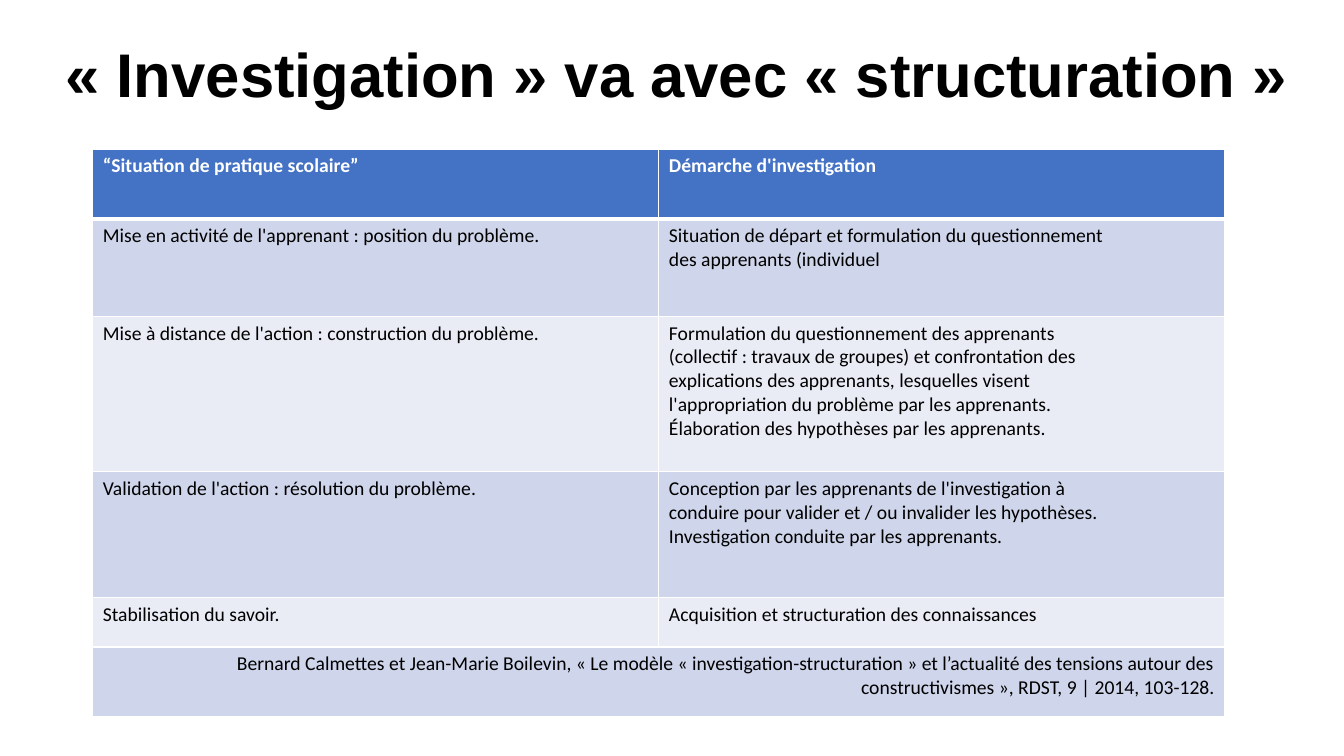
import pptx
import pptx.dml.color
import pptx.enum.text
import pptx.oxml
import pptx.oxml.ns
import pptx.util

RGBColor = pptx.dml.color.RGBColor
Inches = pptx.util.Inches
Pt = pptx.util.Pt
PP_ALIGN = pptx.enum.text.PP_ALIGN
MSO_ANCHOR = pptx.enum.text.MSO_ANCHOR

# Content: row height in inches, then the lines of each cell
TITLE = "« Investigation » va avec « structuration »"
ROWS = [
    (0.69, ["“Situation de pratique scolaire”"], ["Démarche d'investigation"]),
    (0.97, ["Mise en activité de l'apprenant : position du problème."],
     ["Situation de départ et formulation du questionnement",
      "des apprenants (individuel"]),
    (1.54, ["Mise à distance de l'action : construction du problème."],
     ["Formulation du questionnement des apprenants",
      "(collectif : travaux de groupes) et confrontation des",
      "explications des apprenants, lesquelles visent",
      "l'appropriation du problème par les apprenants.",
      "Élaboration des hypothèses par les apprenants."]),
    (1.25, ["Validation de l'action : résolution du problème."],
     ["Conception par les apprenants de l'investigation à",
      "conduire pour valider et / ou invalider les hypothèses.",
      "Investigation conduite par les apprenants."]),
    (0.49, ["Stabilisation du savoir."],
     ["Acquisition et structuration des connaissances"]),
    (0.69, ["Bernard Calmettes et Jean-Marie Boilevin, « Le modèle "
            "« investigation-structuration » et l’actualité des tensions autour "
            "des constructivismes », RDST, 9 | 2014, 103-128."]),
]

# Style and layout
BLACK = RGBColor(0, 0, 0)
WHITE = RGBColor(255, 255, 255)
HEADER_BLUE = RGBColor(0x44, 0x72, 0xC4)
BANDS = [RGBColor(0xE9, 0xEB, 0xF5), RGBColor(0xCF, 0xD5, 0xEA)]
WIDTH, HEIGHT = 13.33, 7.5
COLUMNS = 2
TABLE_LEFT, TABLE_TOP, TABLE_WIDTH = 0.92, 1.48, 11.23


def add_borders(cell, widths):
    """Draw white lines on the sides of a cell; widths maps side to points."""
    properties = cell._tc.get_or_add_tcPr()
    for side, points in widths.items():
        properties.append(pptx.oxml.parse_xml(
            f'<a:ln{side} {pptx.oxml.ns.nsdecls("a")} w="{Pt(points)}">'
            f'<a:solidFill><a:srgbClr val="{WHITE}"/></a:solidFill></a:ln{side}>'))


def fill_cell(cell, lines, row):
    header, source = row == 0, row == len(ROWS) - 1
    add_borders(cell, {"L": 1, "R": 1, "T": 3 if row == 1 else 1,
                       "B": 3 if header else 1})
    cell.fill.solid()
    cell.fill.fore_color.rgb = HEADER_BLUE if header else BANDS[row % 2]
    cell.text = "\n".join(lines)
    for paragraph in cell.text_frame.paragraphs:
        paragraph.alignment = PP_ALIGN.RIGHT if source else PP_ALIGN.LEFT
        paragraph.font.name = "Calibri"
        paragraph.font.size = Pt(14)
        paragraph.font.bold = header
        paragraph.font.color.rgb = WHITE if header else BLACK


presentation = pptx.Presentation()
presentation.slide_width = Inches(WIDTH)
presentation.slide_height = Inches(HEIGHT)
slide = presentation.slides.add_slide(presentation.slide_layouts[5])

# Title, reaching the right edge of the slide
title = slide.shapes.title
title.left, title.top = Inches(0.55), Inches(0.04)
title.width, title.height = Inches(WIDTH - 0.55), Inches(1.45)
title.text = TITLE
title.text_frame.auto_size = pptx.enum.text.MSO_AUTO_SIZE.NONE
title.text_frame.vertical_anchor = MSO_ANCHOR.MIDDLE
heading = title.text_frame.paragraphs[0]
heading.alignment = PP_ALIGN.LEFT
heading.line_spacing = 0.9
heading.font.name = "Arial"
heading.font.size = Pt(44)
heading.font.bold = True
heading.font.color.rgb = BLACK

# Comparison table, with the source across the last row
table = slide.shapes.add_table(
    len(ROWS), COLUMNS, Inches(TABLE_LEFT), Inches(TABLE_TOP),
    Inches(TABLE_WIDTH), Inches(sum(row[0] for row in ROWS))).table
table.cell(len(ROWS) - 1, 0).merge(table.cell(len(ROWS) - 1, COLUMNS - 1))
for row, (height, *cells) in enumerate(ROWS):
    table.rows[row].height = Inches(height)
    for column, lines in enumerate(cells):
        fill_cell(table.cell(row, column), lines, row)

presentation.save("out.pptx")
